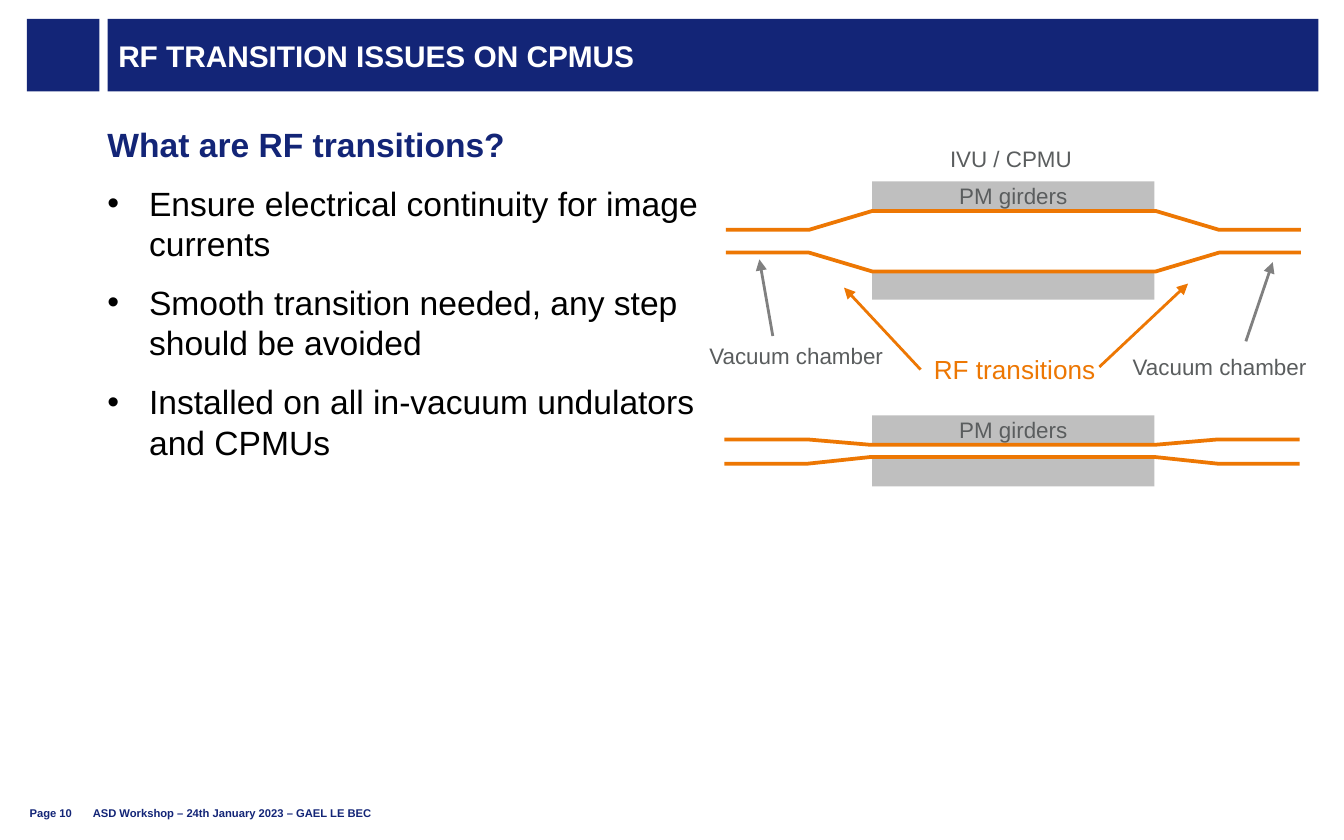
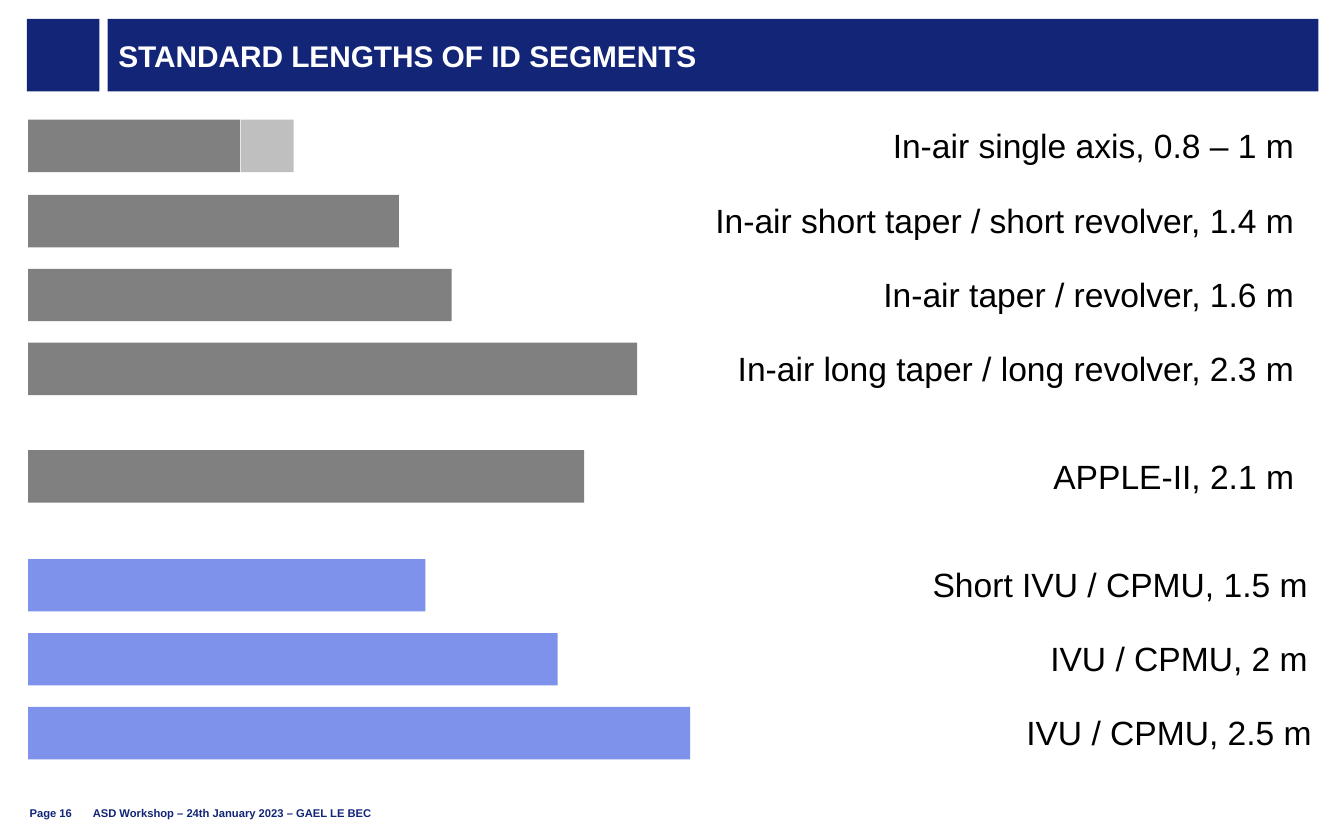
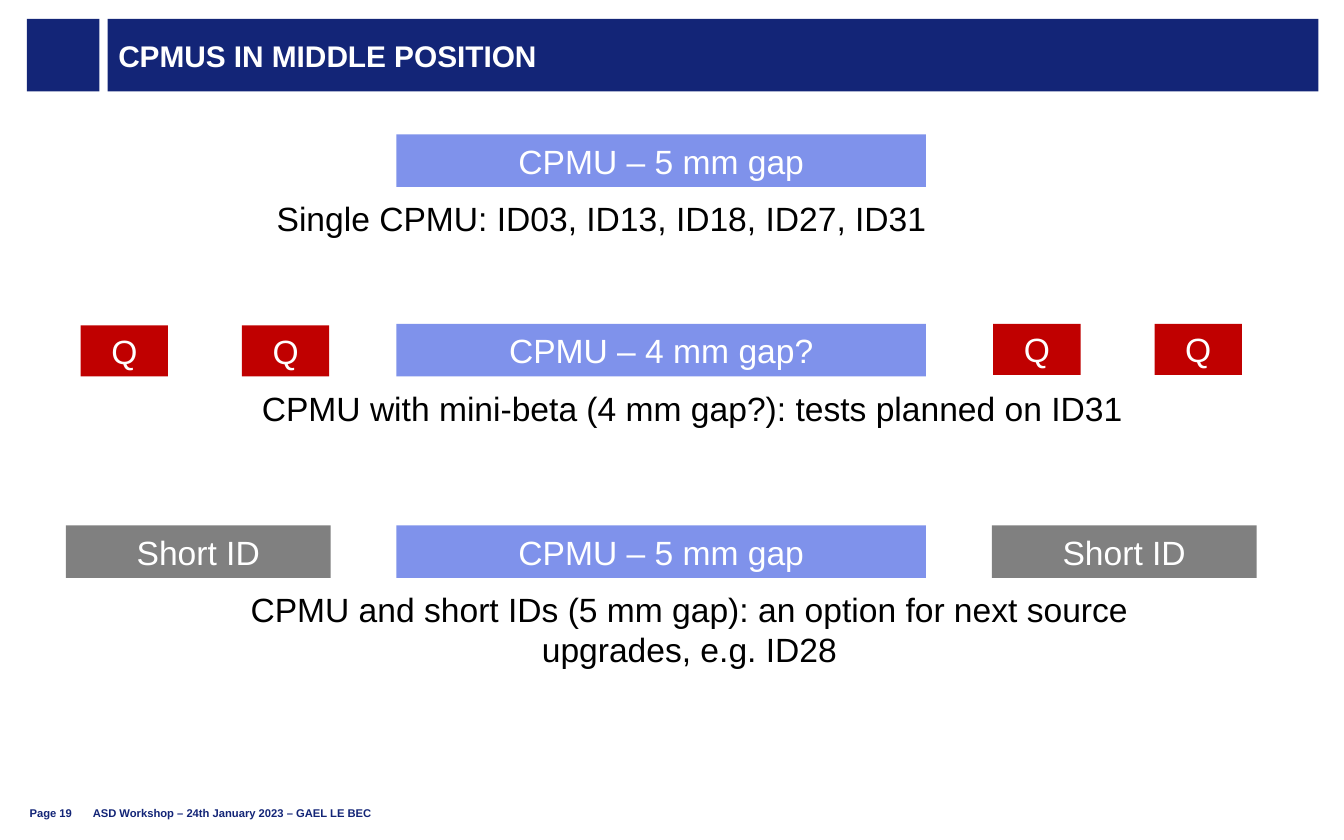
from dataclasses import dataclass

from lxml.etree import SubElement
from pptx import Presentation
from pptx.dml.color import RGBColor
from pptx.enum.shapes import MSO_CONNECTOR, MSO_SHAPE
from pptx.enum.text import MSO_ANCHOR, PP_ALIGN
from pptx.oxml.ns import qn
from pptx.presentation import Presentation as Deck
from pptx.shapes.autoshape import Shape
from pptx.shapes.connector import Connector
from pptx.slide import Slide
from pptx.text.text import TextFrame, _Paragraph
from pptx.util import Inches, Pt

NAVY = RGBColor(0x13, 0x25, 0x77)
WHITE = RGBColor(0xFF, 0xFF, 0xFF)
BLACK = RGBColor(0x00, 0x00, 0x00)
GRAY = RGBColor(0x80, 0x80, 0x80)
LIGHT_GRAY = RGBColor(0xBF, 0xBF, 0xBF)
TEXT_GRAY = RGBColor(0x5A, 0x5D, 0x5E)
ORANGE = RGBColor(0xED, 0x77, 0x03)
PERIWINKLE = RGBColor(0x7F, 0x92, 0xEB)
RED = RGBColor(0xC0, 0x00, 0x00)

FONT = "Arial"
FOOTER = "ASD Workshop – 24th January 2023 – GAEL LE BEC"
BAR_HEIGHT = 0.39
INCHES_PER_METRE = 1.97
GIRDER_LEFT, GIRDER_WIDTH, GIRDER_HEIGHT = 6.49, 2.1, 0.21
CHAMBER_STEPS = (0, 0.62, 1.09, 3.2, 3.67, 4.28)


@dataclass(frozen=True)
class Box:
    left: float
    top: float
    width: float
    height: float


@dataclass(frozen=True)
class Label:
    text: str
    box: Box
    size: float = 18
    color: RGBColor = BLACK
    align: PP_ALIGN = PP_ALIGN.LEFT


@dataclass(frozen=True)
class Arrow:
    start: tuple[float, float]
    end: tuple[float, float]
    color: RGBColor


@dataclass(frozen=True)
class Undulator:
    """Two girders with the upper and lower chamber walls between them."""
    chamber_left: float
    girder_tops: tuple[float, float]
    walls: tuple[tuple[float, float], tuple[float, float]]  # (at the ends, along the girder)


@dataclass(frozen=True)
class Segment:
    text: str
    metres: float
    top: float
    color: RGBColor
    label_width: float
    label_right: float = 9.8
    label_inset: float = 0.17


@dataclass(frozen=True)
class Device:
    text: str
    box: Box
    color: RGBColor


def place(box: Box) -> tuple[int, int, int, int]:
    return Inches(box.left), Inches(box.top), Inches(box.width), Inches(box.height)


def set_margins(frame: TextFrame, horizontal: float, vertical: float) -> None:
    frame.margin_left = frame.margin_right = Inches(horizontal)
    frame.margin_top = frame.margin_bottom = Inches(vertical)


def format_runs(paragraph: _Paragraph, size: float, color: RGBColor, bold: bool = False) -> None:
    for run in paragraph.runs:
        run.font.name = FONT
        run.font.size = Pt(size)
        run.font.bold = bold
        run.font.color.rgb = color


def add_block(slide: Slide, box: Box, color: RGBColor, text: str = "",
              size: float = 18, text_color: RGBColor = WHITE) -> Shape:
    block = slide.shapes.add_shape(MSO_SHAPE.RECTANGLE, *place(box))
    block.shadow.inherit = False
    block.fill.solid()
    block.fill.fore_color.rgb = color
    block.line.fill.background()
    if text:
        frame = block.text_frame
        frame.text = text
        frame.vertical_anchor = MSO_ANCHOR.MIDDLE
        frame.paragraphs[0].alignment = PP_ALIGN.CENTER
        format_runs(frame.paragraphs[0], size, text_color)
    return block


def add_label(slide: Slide, label: Label) -> Shape:
    holder = slide.shapes.add_textbox(*place(label.box))
    frame = holder.text_frame
    frame.word_wrap = False
    frame.text = label.text
    frame.paragraphs[0].alignment = label.align
    format_runs(frame.paragraphs[0], label.size, label.color)
    return holder


def add_arrow(slide: Slide, arrow: Arrow) -> Connector:
    ends = [Inches(value) for value in (*arrow.start, *arrow.end)]
    connector = slide.shapes.add_connector(MSO_CONNECTOR.STRAIGHT, *ends)
    connector.line.color.rgb = arrow.color
    connector.line.width = Pt(1.5)
    SubElement(connector.line._get_or_add_ln(), qn("a:tailEnd"), type="triangle")
    SubElement(connector._element.spPr, qn("a:effectLst"))
    return connector


def add_footer(slide: Slide, text: str, left: float, width: float) -> None:
    footer = add_label(slide, Label(text, Box(left, 5.91, width, 0.19), 6, NAVY))
    set_margins(footer.text_frame, 0, 0)
    footer.text_frame.vertical_anchor = MSO_ANCHOR.BOTTOM
    format_runs(footer.text_frame.paragraphs[0], 6, NAVY, bold=True)


def start_slide(deck: Deck, heading: str, page: int) -> Slide:
    """Add a slide with its title band and footer."""
    slide = deck.slides.add_slide(deck.slide_layouts.get_by_name("Title Only"))
    add_block(slide, Box(0.2, 0.14, 0.54, 0.54), NAVY)
    title = slide.shapes.title
    title.left, title.top, title.width, title.height = place(Box(0.8, 0.14, 9.01, 0.54))
    title.fill.solid()
    title.fill.fore_color.rgb = NAVY
    frame = title.text_frame
    frame.text = heading
    frame.vertical_anchor = MSO_ANCHOR.MIDDLE
    set_margins(frame, 0.08, 0)
    frame.paragraphs[0].alignment = PP_ALIGN.LEFT
    format_runs(frame.paragraphs[0], 16, WHITE, bold=True)
    add_footer(slide, f"Page {page}", 0.22, 0.45)
    add_footer(slide, FOOTER, 0.69, 6.69)
    return slide


def add_bullet(paragraph: _Paragraph) -> None:
    properties = paragraph._p.get_or_add_pPr()
    properties.set("marL", str(Inches(0.31)))
    properties.set("indent", str(-Inches(0.31)))
    SubElement(properties, qn("a:buFont"), typeface=FONT)
    SubElement(properties, qn("a:buChar"), char="•")


def add_question(slide: Slide, question: str, answers: tuple[str, ...]) -> None:
    body = slide.shapes.add_textbox(*place(Box(0.8, 0.92, 4.67, 4.65)))
    frame = body.text_frame
    frame.word_wrap = True
    set_margins(frame, 0, 0)
    frame.text = question
    format_runs(frame.paragraphs[0], 18, NAVY, bold=True)
    for answer in answers:
        paragraph = frame.add_paragraph()
        paragraph.text = answer
        add_bullet(paragraph)
        format_runs(paragraph, 18, BLACK)
    for paragraph in frame.paragraphs:
        paragraph.space_after = Pt(10)


def add_wall(slide: Slide, left: float, end_y: float, girder_y: float) -> None:
    heights = (end_y, end_y, girder_y, girder_y, end_y, end_y)
    points = [(Inches(left + step), Inches(y)) for step, y in zip(CHAMBER_STEPS, heights)]
    builder = slide.shapes.build_freeform(*points[0])
    builder.add_line_segments(points[1:], close=False)
    wall = builder.convert_to_shape()
    wall.shadow.inherit = False
    wall.fill.background()
    wall.line.color.rgb = ORANGE
    wall.line.width = Pt(2)


def add_undulator(slide: Slide, undulator: Undulator) -> None:
    for top, name in zip(undulator.girder_tops, ("PM girders", "")):
        girder = Box(GIRDER_LEFT, top, GIRDER_WIDTH, GIRDER_HEIGHT)
        add_block(slide, girder, LIGHT_GRAY, name, 12, TEXT_GRAY)
    for end_y, girder_y in undulator.walls:
        add_wall(slide, undulator.chamber_left, end_y, girder_y)


def build_transitions(deck: Deck) -> None:
    slide = start_slide(deck, "RF TRANSITION ISSUES ON CPMUS", 10)
    add_question(slide, "What are RF transitions?", (
        "Ensure electrical continuity for image currents",
        "Smooth transition needed, any step should be avoided",
        "Installed on all in-vacuum undulators and CPMUs",
    ))
    open_gap = Undulator(5.4, (1.35, 2.02), ((1.71, 1.57), (1.88, 2.02)))
    closed_gap = Undulator(5.39, (3.09, 3.41), ((3.27, 3.31), (3.45, 3.4)))
    for undulator in (open_gap, closed_gap):
        add_undulator(slide, undulator)
    for text, box in (
        ("IVU / CPMU", Box(6.97, 1.03, 1.12, 0.3)),
        ("Vacuum chamber", Box(5.18, 2.5, 1.5, 0.3)),
        ("Vacuum chamber", Box(8.33, 2.58, 1.5, 0.3)),
    ):
        add_label(slide, Label(text, box, 12, TEXT_GRAY))
    transitions = add_label(
        slide, Label("RF transitions", Box(6.85, 2.58, 1.41, 0.34), 14, ORANGE))
    for arrow in (
        Arrow((5.75, 2.5), (5.65, 1.93), GRAY),
        Arrow((9.27, 2.54), (9.47, 1.95), GRAY),
        Arrow((8.18, 2.73), (8.84, 2.11), ORANGE),
    ):
        add_arrow(slide, arrow)
    left_arrow = add_arrow(slide, Arrow((6.85, 2.75), (6.28, 2.14), ORANGE))
    left_arrow.begin_connect(transitions, 1)


def add_segment(slide: Slide, segment: Segment) -> None:
    length = segment.metres * INCHES_PER_METRE
    add_block(slide, Box(0.21, segment.top, length, BAR_HEIGHT), segment.color)
    box = Box(segment.label_right - segment.label_width, segment.top - 0.01,
              segment.label_width, 0.4)
    label = add_label(slide, Label(segment.text, box, align=PP_ALIGN.RIGHT))
    label.text_frame.margin_right = Inches(segment.label_inset)


def build_lengths(deck: Deck) -> None:
    slide = start_slide(deck, "STANDARD LENGTHS OF ID SEGMENTS", 16)
    for segment in (
        Segment("In-air single axis, 0.8 – 1 m", 0.8, 0.89, GRAY, 3.29),
        Segment("In-air short taper / short revolver, 1.4 m", 1.4, 1.45, GRAY, 4.62),
        Segment("In-air taper / revolver, 1.6 m", 1.6, 2, GRAY, 3.36),
        Segment("In-air long taper / long revolver, 2.3 m", 2.3, 2.55, GRAY, 4.45),
        Segment("APPLE-II, 2.1 m", 2.1, 3.35, GRAY, 2.08),
        Segment("Short IVU / CPMU, 1.5 m", 1.5, 4.16, PERIWINKLE, 3.02, 9.83, 0.1),
        Segment("IVU / CPMU, 2 m", 2, 4.71, PERIWINKLE, 2.14, 9.83, 0.1),
        Segment("IVU / CPMU, 2.5 m", 2.5, 5.26, PERIWINKLE, 2.35, 9.86, 0.1),
    ):
        add_segment(slide, segment)
    single_axis_extension = Box(1.79, 0.89, 0.2 * INCHES_PER_METRE, BAR_HEIGHT)
    add_block(slide, single_axis_extension, LIGHT_GRAY)


def build_positions(deck: Deck) -> None:
    slide = start_slide(deck, "CPMUS IN MIDDLE POSITION", 19)
    cpmus = [
        Device(f"CPMU – {gap}", Box(2.95, top, 3.94, BAR_HEIGHT), PERIWINKLE)
        for gap, top in (("5 mm gap", 1), ("4 mm gap?", 2.41), ("5 mm gap", 3.91))
    ]
    quadrupoles = [
        Device("Q", Box(left, top, 0.65, 0.38), RED)
        for left, top in ((0.6, 2.42), (1.8, 2.42), (7.39, 2.41), (8.59, 2.41))
    ]
    short_ids = [
        Device("Short ID", Box(left, 3.91, 1.97, BAR_HEIGHT), GRAY) for left in (0.49, 7.38)
    ]
    for device in cpmus + quadrupoles + short_ids:
        add_block(slide, device.box, device.color, device.text)
    for label in (
        Label("Single CPMU: ID03, ID13, ID18, ID27, ID31", Box(1.96, 1.42, 5.15, 0.4)),
        Label("CPMU with mini-beta (4 mm gap?): tests planned on ID31",
              Box(1.85, 2.84, 6.67, 0.4)),
        Label("CPMU and short IDs (5 mm gap): an option for next source\vupgrades, e.g. ID28",
              Box(1.7, 4.33, 6.86, 0.71), align=PP_ALIGN.CENTER),
    ):
        add_label(slide, label)


def main() -> None:
    deck = Presentation()
    deck.slide_width, deck.slide_height = Inches(10), Inches(6.25)
    build_transitions(deck)
    build_lengths(deck)
    build_positions(deck)
    deck.save("out.pptx")


if __name__ == "__main__":
    main()
